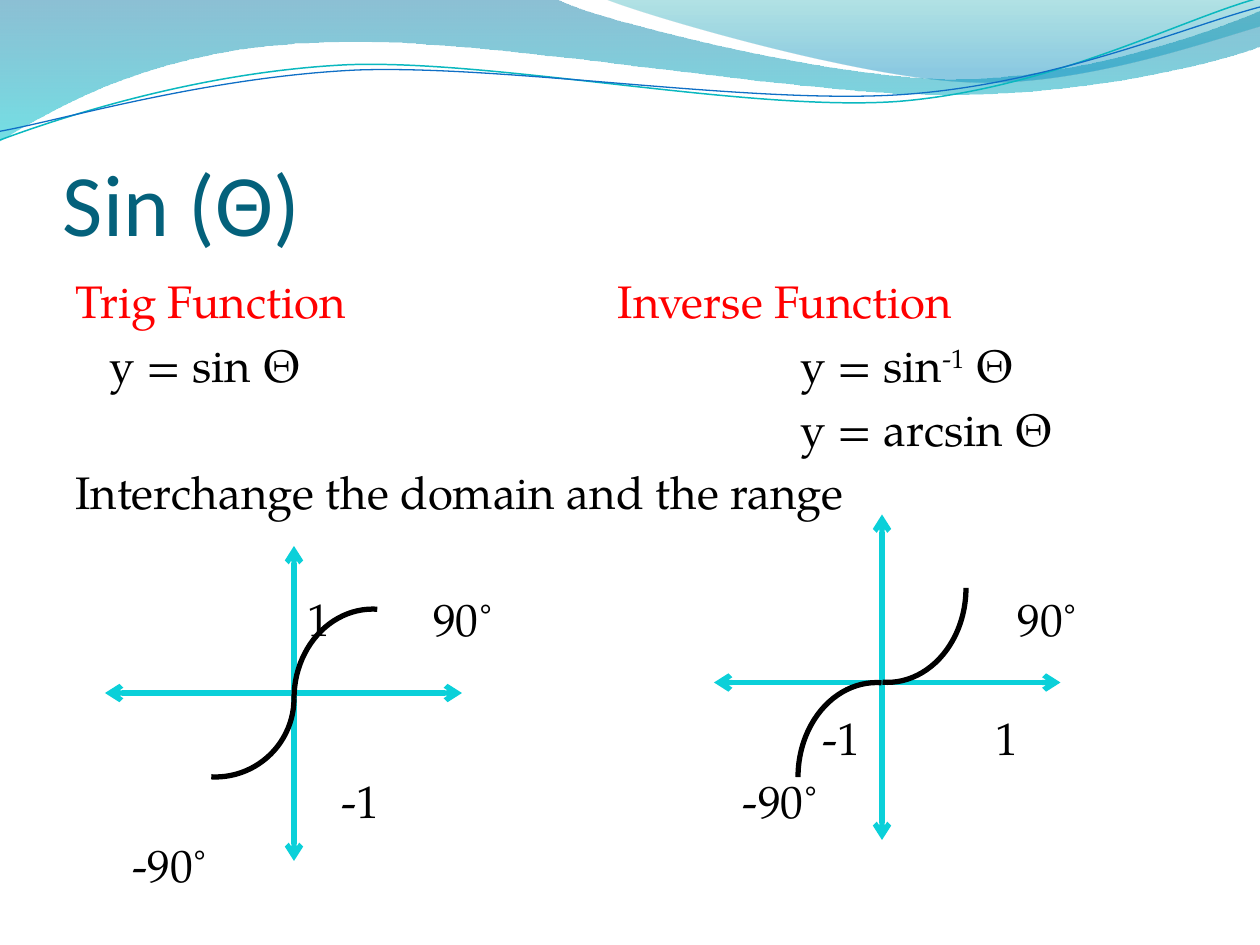
from lxml import etree
from pptx import Presentation
from pptx import util as u
from pptx.dml.color import RGBColor
from pptx.enum import shapes, text
from pptx.oxml.ns import qn

Pt = u.Pt
TEAL = RGBColor(0x04, 0x61, 0x7B)
RED = RGBColor(0xFF, 0, 0)
BLACK = RGBColor(0, 0, 0)
AXIS = RGBColor(0x0B, 0xD0, 0xD9)
DEEP, AQUA = RGBColor(0, 0x74, 0xA1), RGBColor(0, 0xC6, 0xCF)
SEA, SKY = RGBColor(0, 0xA1, 0xA9), RGBColor(0, 0x8B, 0xBF)
THREAD_TEAL, THREAD_BLUE = RGBColor(0x0A, 0xB8, 0xBF), RGBColor(0x0F, 0x6F, 0xC6)
BODY_FONT = "TeX Gyre Pagella"
BODY_SIZE = 26
GAP, LINE = 5.2, 31.1  # space before a paragraph, height of a line

# Outlines: a pair is a straight step, six numbers are a Bezier curve.
BANDS = [  # outline, gradient stops (position, colour, opacity %)
    ([(0, 0), (317, -1), (343, 12, 478, 45, 546, 45), (614, 45, 690, 19, 720, 6),
      (721, 26), (708, 32, 626, 55, 537, 54), (448, 54, 275, 20, 185, 24),
      (93, 26, 33, 60, -1, 81)],
     [(0, DEEP, 45), (1, AQUA, 55)]),
    ([(345, -1), (366, 8, 491, 45, 554, 47), (616, 50, 692, 23, 720, 15), (720, 0)],
     [(0, SEA, 30), (0.8, SKY, 45)]),
]
THREADS = [  # outline, colour, width
    ([(0, 80), (35, 67, 114, 41, 199, 37), (284, 34, 427, 64, 513, 58),
      (600, 51, 675, 11, 719, -1)], THREAD_TEAL, 0.85),
    ([(0, 75), (34, 69, 118, 44, 204, 40), (290, 37, 430, 60, 516, 54),
      (602, 48, 678, 15, 720, 4)], THREAD_BLUE, 0.75),
]
# Body rows: colour, tab stops, runs (text, superscript), skipped lines above
ROWS = [
    (RED, [310], [("Trig Function\tInverse Function", False)], 0),
    (BLACK, [19.5, 414.5],
     [("\ty = sin Θ\ty = sin", False), ("-1", True), (" Θ", False)], 0),
    (BLACK, [414.5], [("\ty = arcsin Θ", False)], 0),
    (BLACK, [], [("Interchange the domain and the range", False)], 0),
    (BLACK, [132.5, 204.5, 538.3], [("\t1\t90˚\t90˚", False)], LINE + GAP),
    (BLACK, [427, 526], [("\t-1\t1", False)], LINE),
    (BLACK, [152, 381.5], [("\t-1\t-90˚", False)], 0),
    (BLACK, [32.5], [("\t-90˚", False)], 0),
]
AXES = [(168, 312, 168, 492), (60, 396, 264, 396),
        (504, 294, 504, 480), (408, 390, 606, 390)]
ARCS = [  # left, top, width, height, rotation
    (162, 354, 102, 90, 270), (78, 354, 90, 90, 90),
    (453, 291, 108, 90, 90), (447, 399, 108, 90, 270),
]


def add_outline(s, outline, close):
    """Draw an outline, joining each group of three points into a Bezier curve."""
    pts = [(Pt(x), Pt(y)) for part in outline for x, y in zip(part[::2], part[1::2])]
    fb = s.shapes.build_freeform(*pts[0], scale=1.0)
    fb.add_line_segments(pts[1:], close=close)
    sp = fb.convert_to_shape()
    sp.shadow.inherit = False
    steps = iter(list(sp._element.iter(qn("a:lnTo"))))
    for part in outline[1:]:
        step = next(steps)
        if len(part) == 6:
            curve = etree.Element(qn("a:cubicBezTo"))
            step.addprevious(curve)
            for old in (step, next(steps), next(steps)):
                curve.append(old[0])
                old.getparent().remove(old)
    return sp


def add_band(s, outline, stops):
    sp = add_outline(s, outline, True)
    sp.line.fill.background()
    sp.fill.gradient()
    sp.fill.gradient_angle = 270
    for stop, (pos, colour, _) in zip(sp.fill.gradient_stops, stops):
        stop.position = pos
        stop.color.rgb = colour
    for clr, (_, _, opacity) in zip(sp._element.spPr.iter(qn("a:srgbClr")), stops):
        etree.SubElement(clr, qn("a:alpha"), val=str(opacity * 1000))


def add_thread(s, outline, colour, width):
    sp = add_outline(s, outline, False)
    sp.fill.background()
    sp.line.color.rgb = colour
    sp.line.width = Pt(width)


def add_frame(s, left, top, width, height, inset):
    tf = s.shapes.add_textbox(Pt(left), Pt(top), Pt(width), Pt(height)).text_frame
    tf.word_wrap = True
    tf.margin_left = tf.margin_right = Pt(inset)
    return tf


def add_run(p, words, font, size, colour):
    r = p.add_run()
    r.text = words
    r.font.name, r.font.size = font, Pt(size)
    r.font.color.rgb = colour
    return r


def add_body(s):
    tf = add_frame(s, 36, 152.64, 648, 345.6, 7.2)
    for i, (colour, tabs, runs, skipped) in enumerate(ROWS):
        p = tf.add_paragraph() if i else tf.paragraphs[0]
        p.space_before = Pt(GAP + skipped)
        if tabs:
            tab_list = etree.SubElement(p._p.get_or_add_pPr(), qn("a:tabLst"))
            for pos in tabs:
                etree.SubElement(tab_list, qn("a:tab"), pos=str(int(Pt(pos))), algn="l")
        for words, raised in runs:
            r = add_run(p, words, BODY_FONT, BODY_SIZE, colour)
            if raised:
                r._r.get_or_add_rPr().set("baseline", "30000")


def add_axis(s, *ends):
    c = s.shapes.add_connector(shapes.MSO_CONNECTOR.STRAIGHT, *map(Pt, ends))
    c.line.color.rgb = AXIS
    c.line.width = Pt(3)
    ln = c.line._get_or_add_ln()
    for end in ("a:headEnd", "a:tailEnd"):
        etree.SubElement(ln, qn(end), type="arrow")
    etree.SubElement(c._element.spPr, qn("a:effectLst"))


def add_arc(s, left, top, width, height, rotation):
    sp = s.shapes.add_shape(shapes.MSO_SHAPE.ARC, Pt(left), Pt(top), Pt(width), Pt(height))
    sp.adjustments[0], sp.adjustments[1] = 162, 1.74
    sp.rotation = rotation
    sp.shadow.inherit = False
    sp.fill.background()
    sp.line.color.rgb = BLACK
    sp.line.width = Pt(3)


def main():
    prs = Presentation()
    prs.slide_width, prs.slide_height = Pt(720), Pt(540)
    s = prs.slides.add_slide(prs.slide_layouts[6])
    for band in BANDS:
        add_band(s, *band)
    for thread in THREADS:
        add_thread(s, *thread)
    title = add_frame(s, 36, 55, 648, 90, 0)
    title.vertical_anchor = text.MSO_ANCHOR.BOTTOM
    title.margin_bottom = 0
    add_run(title.paragraphs[0], "Sin (Θ)", "Calibri", 50, TEAL)
    add_body(s)
    for axis in AXES:
        add_axis(s, *axis)
    for arc in ARCS:
        add_arc(s, *arc)
    prs.save("out.pptx")


if __name__ == "__main__":
    main()
